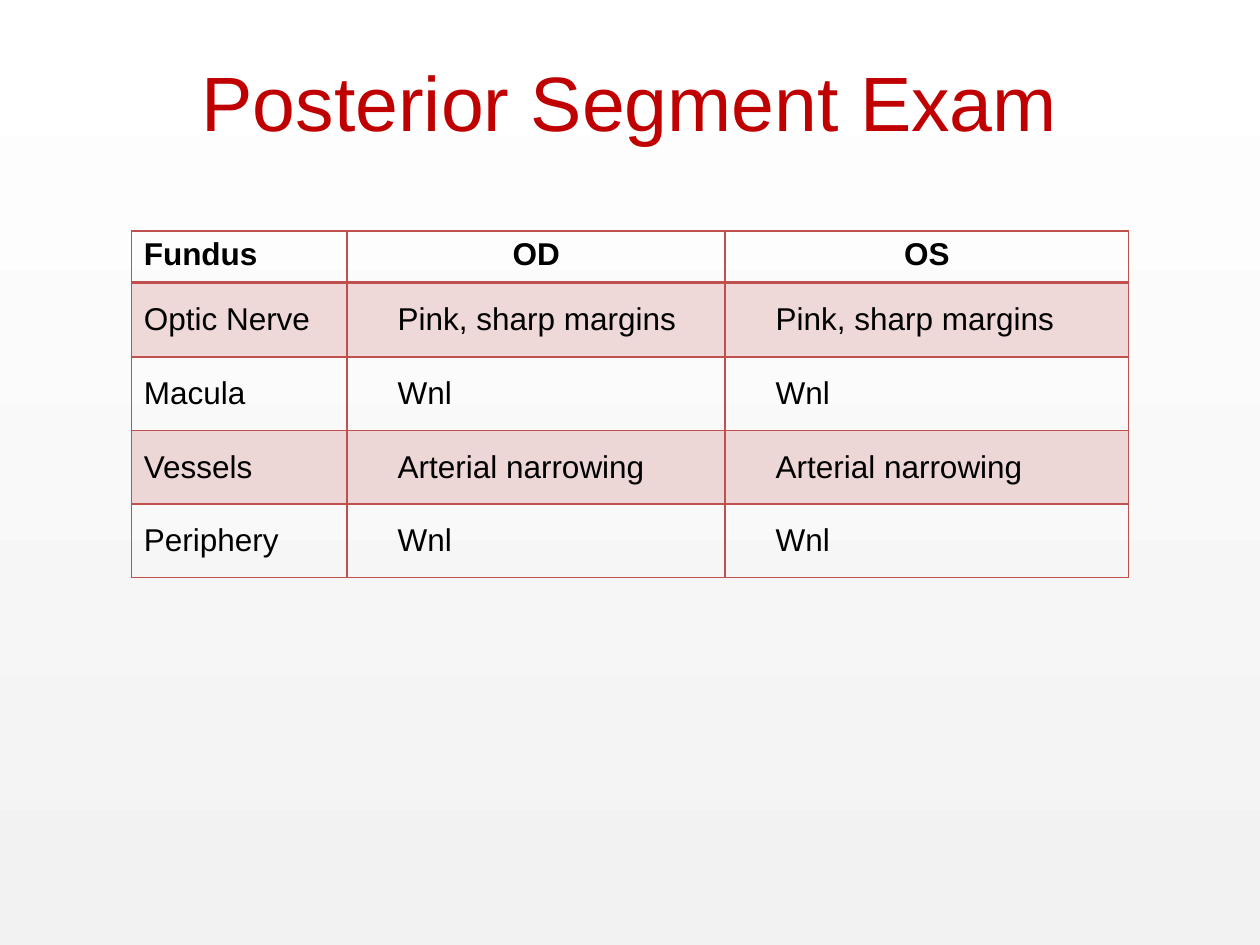
"""Build the posterior segment exam slide with its fundus findings table."""
from lxml import etree
from pptx import Presentation
from pptx.dml.color import RGBColor
from pptx.enum.shapes import MSO_SHAPE
from pptx.enum.text import MSO_ANCHOR, PP_ALIGN
from pptx.oxml.ns import qn
from pptx.util import Pt

RECTANGLE = MSO_SHAPE.RECTANGLE
TOP, MIDDLE = MSO_ANCHOR.TOP, MSO_ANCHOR.MIDDLE
LEFT, CENTER = PP_ALIGN.LEFT, PP_ALIGN.CENTER

TITLE = "Posterior Segment Exam"
FINDINGS = [
    ("Fundus", "OD", "OS"),
    ("Optic Nerve", "Pink, sharp margins", "Pink, sharp margins"),
    ("Macula", "Wnl", "Wnl"),
    ("Vessels", "Arterial narrowing", "Arterial narrowing"),
    ("Periphery", "Wnl", "Wnl"),
]
COLORS = {
    "title": "C00000",
    "text": "000000",
    "accent": "C0504D",
    "bottom": "F2F2F2",
    "top": "FFFFFF",
}
FONT = "Arial"
SLIDE_WIDTH, SLIDE_HEIGHT = 720, 540
TITLE_BOX = (36, 12.24, 648, 90)
TABLE_LEFT, TABLE_TOP = 75, 132
COLUMN_WIDTHS = [123.4, 216, 230.4]
ROW_HEIGHTS = [29.5, 42.5, 42, 42, 42]
BAND_OPACITY = 20
FINDING_INDENT = 28.8


def style_font(font, size, color, bold=False):
    font.name = FONT
    font.size = Pt(size)
    font.bold = bold
    font.color.rgb = RGBColor.from_string(COLORS[color])


def add_background(slide):
    shape = slide.shapes.add_shape(RECTANGLE, 0, 0, Pt(SLIDE_WIDTH), Pt(SLIDE_HEIGHT))
    shape.shadow.inherit = False
    shape.line.fill.background()
    shape.fill.gradient()
    shape.fill.gradient_angle = 90
    for stop, name, position in zip(shape.fill.gradient_stops, ("bottom", "top"), (0, 1)):
        stop.color.rgb = RGBColor.from_string(COLORS[name])
        stop.position = position


def add_title(slide):
    frame = slide.shapes.add_textbox(*map(Pt, TITLE_BOX)).text_frame
    frame.word_wrap = True
    frame.vertical_anchor = MIDDLE
    paragraph = frame.paragraphs[0]
    paragraph.text = TITLE
    paragraph.alignment = CENTER
    style_font(paragraph.font, 44, "title")


def set_fill(cell, banded):
    if not banded:
        cell.fill.background()
        return
    cell.fill.solid()
    cell.fill.fore_color.rgb = RGBColor.from_string(COLORS["accent"])
    color = cell._tc.tcPr.find(".//" + qn("a:srgbClr"))
    etree.SubElement(color, qn("a:alpha"), val=str(BAND_OPACITY * 1000))


def set_borders(cell, widths):
    for index, (side, width) in enumerate(widths.items()):
        line = etree.Element(qn(f"a:ln{side}"), w=str(Pt(width)))
        solid = etree.SubElement(line, qn("a:solidFill"))
        etree.SubElement(solid, qn("a:srgbClr"), val=COLORS["accent"])
        cell._tc.tcPr.insert(index, line)


def fill_cell(cell, text, row, column):
    is_header = row == 0
    cell.text = text
    cell.vertical_anchor = TOP if is_header else MIDDLE
    if column and not is_header:
        cell.margin_left = Pt(FINDING_INDENT)
    paragraph = cell.text_frame.paragraphs[0]
    paragraph.alignment = CENTER if is_header and column else LEFT
    style_font(paragraph.font, 18, "text", bold=is_header)
    set_fill(cell, banded=row % 2 == 1)
    set_borders(cell, {"L": 1, "R": 1, "T": 2 if row == 1 else 1, "B": 2 if is_header else 1})


def add_findings(slide):
    table = slide.shapes.add_table(
        len(FINDINGS), len(COLUMN_WIDTHS), Pt(TABLE_LEFT), Pt(TABLE_TOP),
        Pt(sum(COLUMN_WIDTHS)), Pt(sum(ROW_HEIGHTS)),
    ).table
    table.horz_banding = False
    table.first_row = False
    for column, width in zip(table.columns, COLUMN_WIDTHS):
        column.width = Pt(width)
    for row, height in zip(table.rows, ROW_HEIGHTS):
        row.height = Pt(height)
    for row, texts in enumerate(FINDINGS):
        for column, text in enumerate(texts):
            fill_cell(table.cell(row, column), text, row, column)


def main():
    presentation = Presentation()
    presentation.slide_width = Pt(SLIDE_WIDTH)
    presentation.slide_height = Pt(SLIDE_HEIGHT)
    slide = presentation.slides.add_slide(presentation.slide_layouts[6])
    add_background(slide)
    add_title(slide)
    add_findings(slide)
    presentation.save("out.pptx")


if __name__ == "__main__":
    main()
